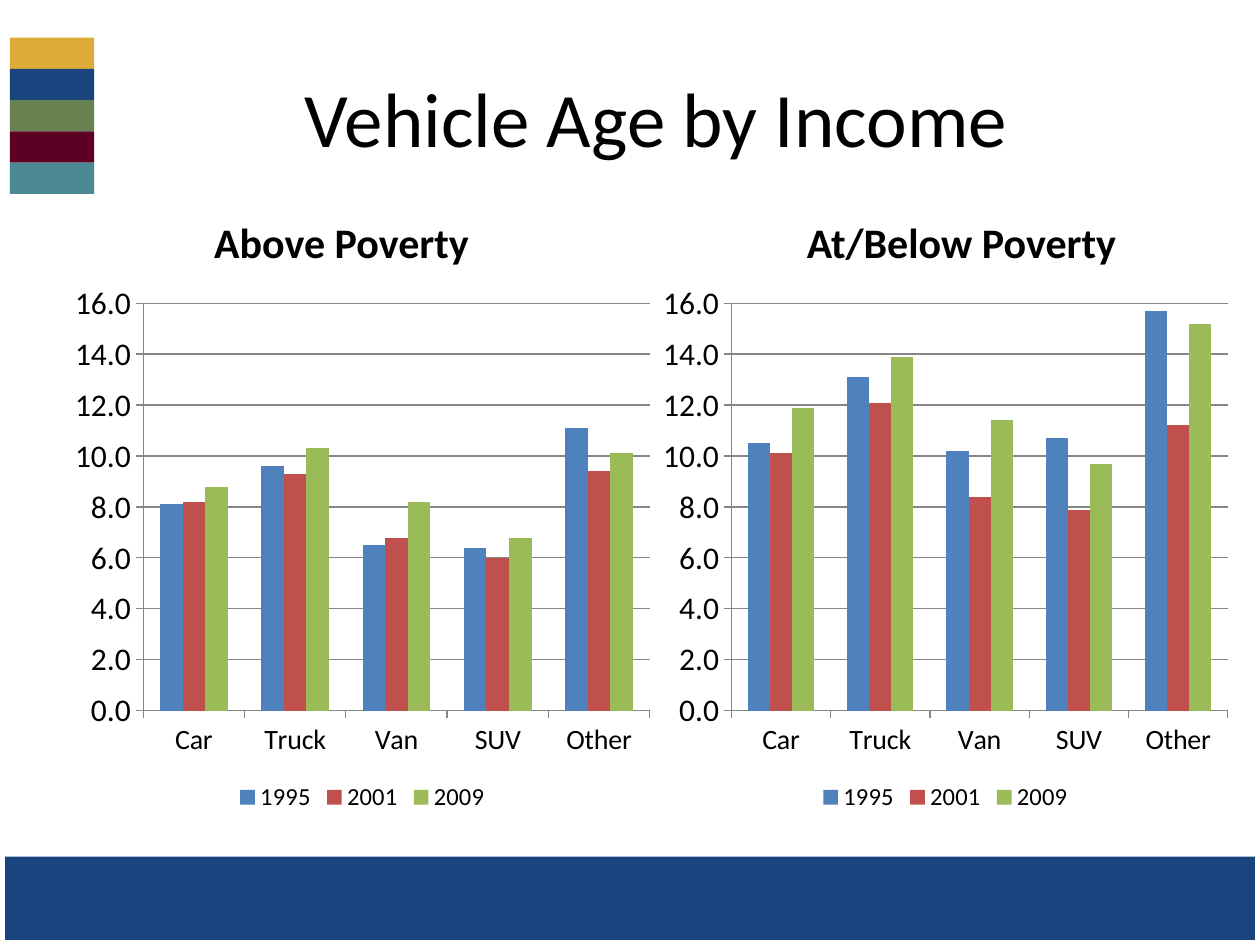
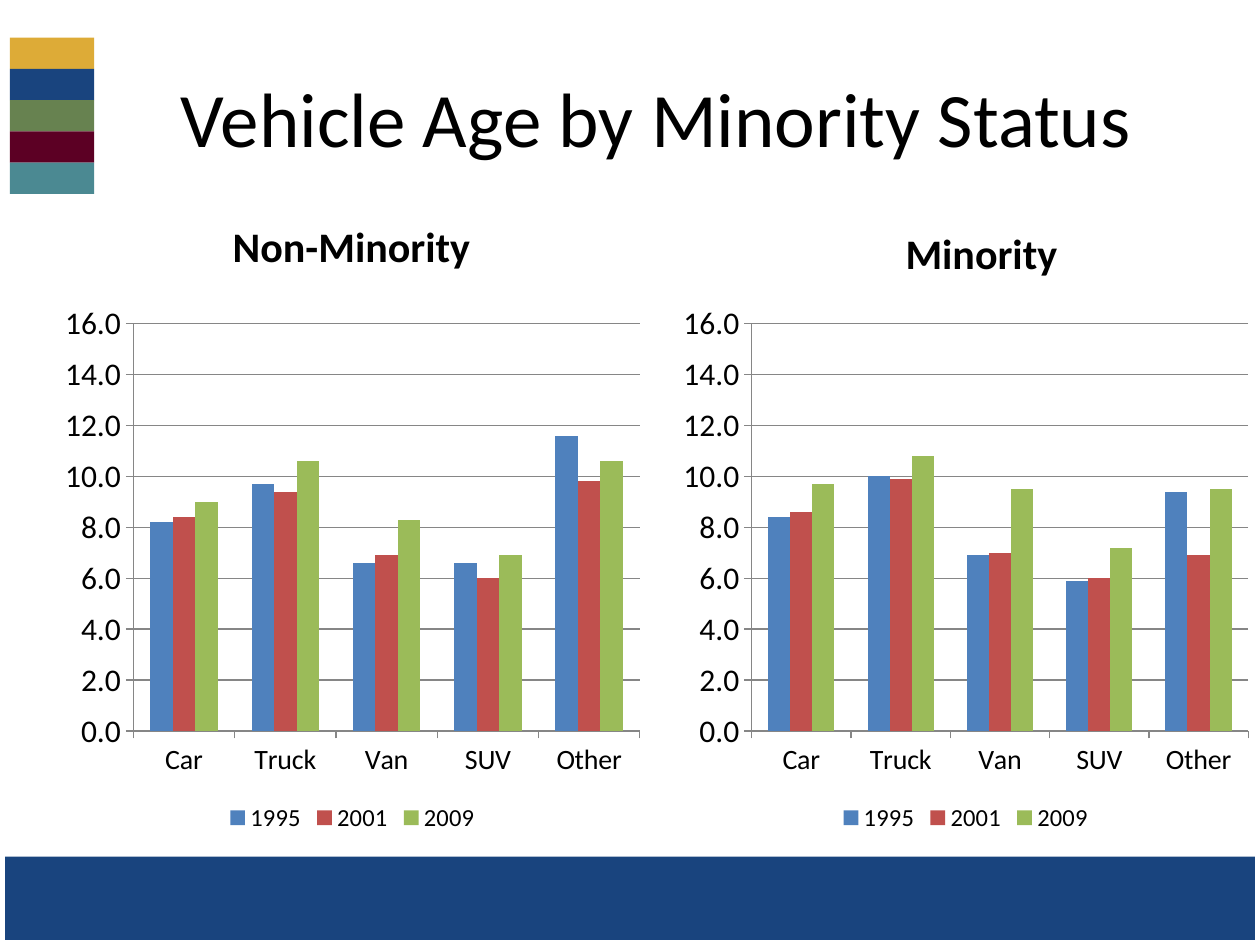
from dataclasses import dataclass

import pptx
import pptx.chart.data
import pptx.dml.color
import pptx.enum.chart
import pptx.enum.shapes
import pptx.enum.text
import pptx.util

Cm, Pt = pptx.util.Cm, pptx.util.Pt
RGB = pptx.dml.color.RGBColor.from_string
Anchor = pptx.enum.text.MSO_ANCHOR


@dataclass(frozen=True)
class Theme:
    font: str = "Calibri"
    text: str = "000000"
    paper: str = "FFFFFF"
    footer: str = "19447E"
    axis: str = "868686"
    stripes: tuple[str, ...] = ("DDAB37", "19447E", "678250", "5C0024", "4B8992")
    series: tuple[str, ...] = ("4F81BD", "C0504D", "9BBB59")
    title_size: int = 44
    heading_size: int = 24
    value_size: int = 18
    category_size: int = 16
    legend_size: int = 14


@dataclass(frozen=True)
class Box:
    """A place on the slide, in centimetres."""
    left: float
    top: float
    width: float
    height: float

    def lengths(self) -> tuple[pptx.util.Length, ...]:
        return tuple(Cm(v) for v in (self.left, self.top, self.width, self.height))


@dataclass(frozen=True)
class Panel:
    heading: str
    heading_box: Box
    chart_box: Box
    ages: tuple[tuple[float, ...], ...]  # one row per survey year


@dataclass(frozen=True)
class Comparison:
    title: str
    left: Panel
    right: Panel


THEME = Theme()
WIDTH, HEIGHT = 25.4, 19.05
TITLE_BOX = Box(2.34, 0.76, 21.79, 3.18)
HEADING_W, HEADING_H = 11.23, 1.78
LEFT_W, RIGHT_W, CHART_H = 12.07, 11.86, 10.97
STRIPE_H = 0.63
VEHICLES = ("Car", "Truck", "Van", "SUV", "Other")
YEARS = ("1995", "2001", "2009")

COMPARISONS = (
    Comparison(
        "Vehicle Age by Income",
        Panel("Above Poverty", Box(1.27, 3.73, HEADING_W, HEADING_H),
              Box(1.27, 5.51, LEFT_W, CHART_H),
              ((8.1, 9.6, 6.5, 6.4, 11.1),
               (8.2, 9.3, 6.8, 6.0, 9.4),
               (8.8, 10.3, 8.2, 6.8, 10.1))),
        Panel("At/Below Poverty", Box(13.77, 3.73, HEADING_W, HEADING_H),
              Box(13.13, 5.51, RIGHT_W, CHART_H),
              ((10.5, 13.1, 10.2, 10.7, 15.7),
               (10.1, 12.1, 8.4, 7.9, 11.2),
               (11.9, 13.9, 11.4, 9.7, 15.2))),
    ),
    Comparison(
        "Vehicle Age by Minority Status",
        Panel("Non-Minority", Box(1.47, 3.81, HEADING_W, HEADING_H),
              Box(1.07, 5.92, LEFT_W, CHART_H),
              ((8.2, 9.7, 6.6, 6.6, 11.6),
               (8.4, 9.4, 6.9, 6.0, 9.8),
               (9.0, 10.6, 8.3, 6.9, 10.6))),
        Panel("Minority", Box(14.17, 3.94, HEADING_W, HEADING_H),
              Box(13.54, 5.92, RIGHT_W, CHART_H),
              ((8.4, 10.0, 6.9, 5.9, 9.4),
               (8.6, 9.9, 7.0, 6.0, 6.9),
               (9.7, 10.8, 9.5, 7.2, 9.5))),
    ),
)


def style_font(font, size: int, bold: bool = False) -> None:
    font.name = THEME.font
    font.size = Pt(size)
    font.bold = bold
    font.color.rgb = RGB(THEME.text)


def place(sp, box: Box) -> None:
    sp.left, sp.top, sp.width, sp.height = box.lengths()


def put_text(sp, text: str, *, box: Box, size: int, bold: bool = False,
             anchor=Anchor.MIDDLE) -> None:
    place(sp, box)
    tf = sp.text_frame
    tf.word_wrap = True
    tf.auto_size = pptx.enum.text.MSO_AUTO_SIZE.NONE
    tf.vertical_anchor = anchor
    p = tf.paragraphs[0]
    p.alignment = pptx.enum.text.PP_ALIGN.CENTER
    p.space_before = Pt(0)
    r = p.add_run()
    r.text = text
    style_font(r.font, size, bold)


def add_rect(s, box: Box, fill: str | None = None, line: str | None = None):
    sp = s.shapes.add_shape(pptx.enum.shapes.MSO_SHAPE.RECTANGLE, *box.lengths())
    sp.shadow.inherit = False
    if fill:
        sp.fill.solid()
        sp.fill.fore_color.rgb = RGB(fill)
    else:
        sp.fill.background()
    if line:
        sp.line.color.rgb = RGB(line)
        sp.line.width = Pt(6)
    else:
        sp.line.fill.background()
    return sp


def decorate_layout(layout, s) -> None:
    """Draw the shared bands on a slide, then move them behind the layout's placeholders."""
    shapes = [add_rect(s, Box(0, 17.27, WIDTH, 1.78), fill=THEME.footer)]
    for i, color in enumerate(THEME.stripes):
        shapes.append(add_rect(s, Box(0.2, 0.76 + i * STRIPE_H, 1.7, STRIPE_H), fill=color))
    shapes.append(add_rect(s, Box(0, 0, WIDTH, HEIGHT), line=THEME.paper))
    for i, sp in enumerate(shapes):
        sp._element.nvSpPr.cNvPr.id = 100 + i
        layout.shapes._spTree.insert(2 + i, sp._element)


def style_axis(axis, size: int) -> None:
    style_font(axis.tick_labels.font, size)
    axis.major_tick_mark = pptx.enum.chart.XL_TICK_MARK.OUTSIDE
    axis.minor_tick_mark = pptx.enum.chart.XL_TICK_MARK.NONE
    axis.format.line.color.rgb = RGB(THEME.axis)
    axis.format.line.width = Pt(0.75)


def add_age_chart(s, panel: Panel) -> None:
    data = pptx.chart.data.CategoryChartData(number_format="0.0")
    data.categories = VEHICLES
    for year, ages in zip(YEARS, panel.ages):
        data.add_series(year, ages)
    chart = s.shapes.add_chart(pptx.enum.chart.XL_CHART_TYPE.COLUMN_CLUSTERED,
                               *panel.chart_box.lengths(), data).chart
    chart.has_title = False
    style_font(chart.font, THEME.value_size)

    chart.has_legend = True
    chart.legend.position = pptx.enum.chart.XL_LEGEND_POSITION.BOTTOM
    chart.legend.include_in_layout = False
    style_font(chart.legend.font, THEME.legend_size)

    style_axis(chart.category_axis, THEME.category_size)
    axis = chart.value_axis
    style_axis(axis, THEME.value_size)
    axis.minimum_scale, axis.maximum_scale, axis.major_unit = 0, 16, 2
    axis.tick_labels.number_format = "0.0"
    axis.tick_labels.number_format_is_linked = False
    axis.has_major_gridlines = True
    grid = axis.major_gridlines.format.line
    grid.color.rgb = RGB(THEME.axis)
    grid.width = Pt(0.75)

    plot = chart.plots[0]
    plot.gap_width, plot.overlap = 150, 0
    plot.vary_by_categories = False
    for series, color in zip(plot.series, THEME.series):
        series.format.fill.solid()
        series.format.fill.fore_color.rgb = RGB(color)


def fill_slide(s, comparison: Comparison) -> None:
    title, left_head, left_body, right_head, right_body = s.placeholders
    put_text(title, comparison.title, box=TITLE_BOX, size=THEME.title_size)
    for head, body, panel in ((left_head, left_body, comparison.left),
                              (right_head, right_body, comparison.right)):
        put_text(head, panel.heading, box=panel.heading_box, size=THEME.heading_size,
                 bold=True, anchor=Anchor.BOTTOM)
        body._element.getparent().remove(body._element)
        add_age_chart(s, panel)


def main() -> None:
    prs = pptx.Presentation()
    prs.slide_width, prs.slide_height = Cm(WIDTH), Cm(HEIGHT)
    layout = prs.slide_layouts.get_by_name("Comparison")
    slides = [prs.slides.add_slide(layout) for _ in COMPARISONS]
    decorate_layout(layout, slides[0])
    for s, comparison in zip(slides, COMPARISONS):
        fill_slide(s, comparison)
    prs.save("out.pptx")


if __name__ == "__main__":
    main()
